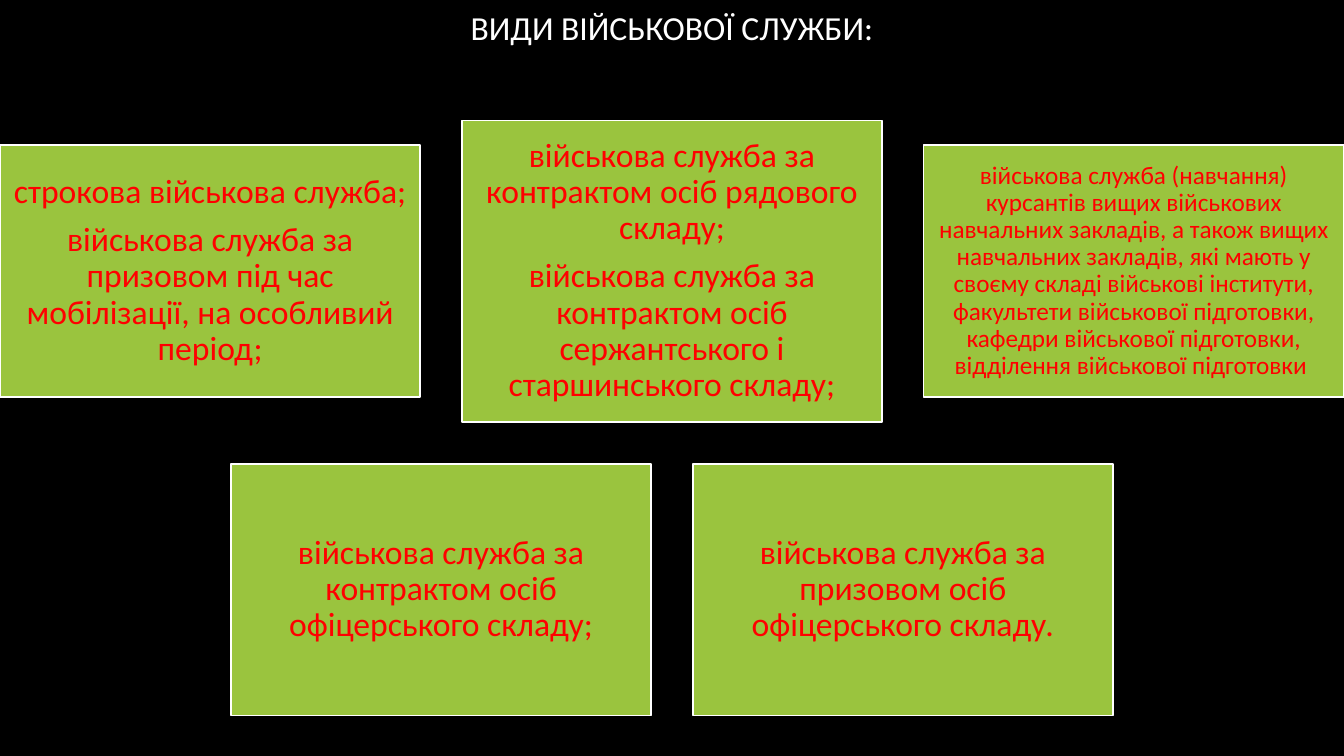
from pptx import Presentation
from pptx.dml.color import RGBColor
from pptx.enum.shapes import MSO_SHAPE
from pptx.enum.text import MSO_ANCHOR, MSO_AUTO_SIZE, PP_ALIGN
from pptx.util import Inches, Pt

SLIDE_WIDTH, SLIDE_HEIGHT = 13.33, 7.5
CARD_WIDTH, COLUMN_STEP = 4.17, 4.58

TITLE = "ВИДИ ВІЙСЬКОВОЇ СЛУЖБИ:"

# Each row: vertical centre and its cards (paragraphs, height, text size, inset)
ROWS = [
    (2.69, [
        (["строкова військова служба;",
          "військова служба за призовом під час мобілізації, на особливий період;"],
         2.5, 24, 0.1),
        (["військова служба за контрактом осіб рядового складу;",
          "військова служба за контрактом осіб сержантського і старшинського складу;"],
         2.99, 24, 0.1),
        (["військова служба (навчання) курсантів вищих військових навчальних закладів, "
          "а також вищих навчальних закладів, які мають у своєму складі військові "
          "інститути, факультети військової підготовки, кафедри військової підготовки, "
          "відділення військової підготовки "],
         2.5, 18, 0.07),
    ]),
    (5.85, [
        (["військова служба за контрактом осіб офіцерського складу;"], 2.5, 24, 0.1),
        (["військова служба за призовом осіб офіцерського складу."], 2.5, 24, 0.1),
    ]),
]


def color(hex_string):
    return RGBColor.from_string(hex_string)


def write_text(text_frame, paragraphs, *, font, size, text_color, space_after=0, inset=None):
    text_frame.word_wrap = True
    text_frame.auto_size = MSO_AUTO_SIZE.NONE
    text_frame.vertical_anchor = MSO_ANCHOR.MIDDLE
    if inset is not None:
        text_frame.margin_left = text_frame.margin_right = Inches(inset)
        text_frame.margin_top = text_frame.margin_bottom = Inches(inset)
    for index, text in enumerate(paragraphs):
        paragraph = text_frame.add_paragraph() if index else text_frame.paragraphs[0]
        paragraph.alignment = PP_ALIGN.CENTER
        paragraph.line_spacing = 0.9
        paragraph.space_before = Pt(0)
        paragraph.space_after = Pt(space_after)
        run = paragraph.add_run()
        run.text = text
        run.font.name = font
        run.font.size = Pt(size)
        run.font.color.rgb = color(text_color)


class ServiceSlide:
    font = "Calibri"
    background = "000000"
    title_color = "FFFFFF"
    card_fill = "9AC43E"
    card_line = "FFFFFF"
    card_text = "FF0000"

    def __init__(self, presentation):
        self.slide = presentation.slides.add_slide(presentation.slide_layouts[5])
        fill = self.slide.background.fill
        fill.solid()
        fill.fore_color.rgb = color(self.background)

    def add_title(self, text):
        title = self.slide.shapes.title
        title.left, title.top = Inches(1), Inches(0)
        title.width, title.height = Inches(11.33), Inches(0.58)
        write_text(title.text_frame, [text], font=self.font, size=24,
                   text_color=self.title_color)

    def add_card(self, left, top, height, paragraphs, size, inset):
        shape = self.slide.shapes.add_shape(
            MSO_SHAPE.RECTANGLE, Inches(left), Inches(top), Inches(CARD_WIDTH), Inches(height))
        shape.shadow.inherit = False
        shape.fill.solid()
        shape.fill.fore_color.rgb = color(self.card_fill)
        shape.line.color.rgb = color(self.card_line)
        shape.line.width = Pt(1.25)
        write_text(shape.text_frame, paragraphs, font=self.font, size=size,
                   text_color=self.card_text, space_after=0.35 * size, inset=inset)

    def add_row(self, center, cards):
        row_width = (len(cards) - 1) * COLUMN_STEP + CARD_WIDTH
        first_left = (SLIDE_WIDTH - row_width) / 2
        for column, (paragraphs, height, size, inset) in enumerate(cards):
            self.add_card(first_left + column * COLUMN_STEP, center - height / 2,
                          height, paragraphs, size, inset)


def main():
    presentation = Presentation()
    presentation.slide_width = Inches(SLIDE_WIDTH)
    presentation.slide_height = Inches(SLIDE_HEIGHT)

    # Title
    service_slide = ServiceSlide(presentation)
    service_slide.add_title(TITLE)

    # Rows of cards, each centred on the slide
    for center, cards in ROWS:
        service_slide.add_row(center, cards)

    presentation.save("out.pptx")


if __name__ == "__main__":
    main()
